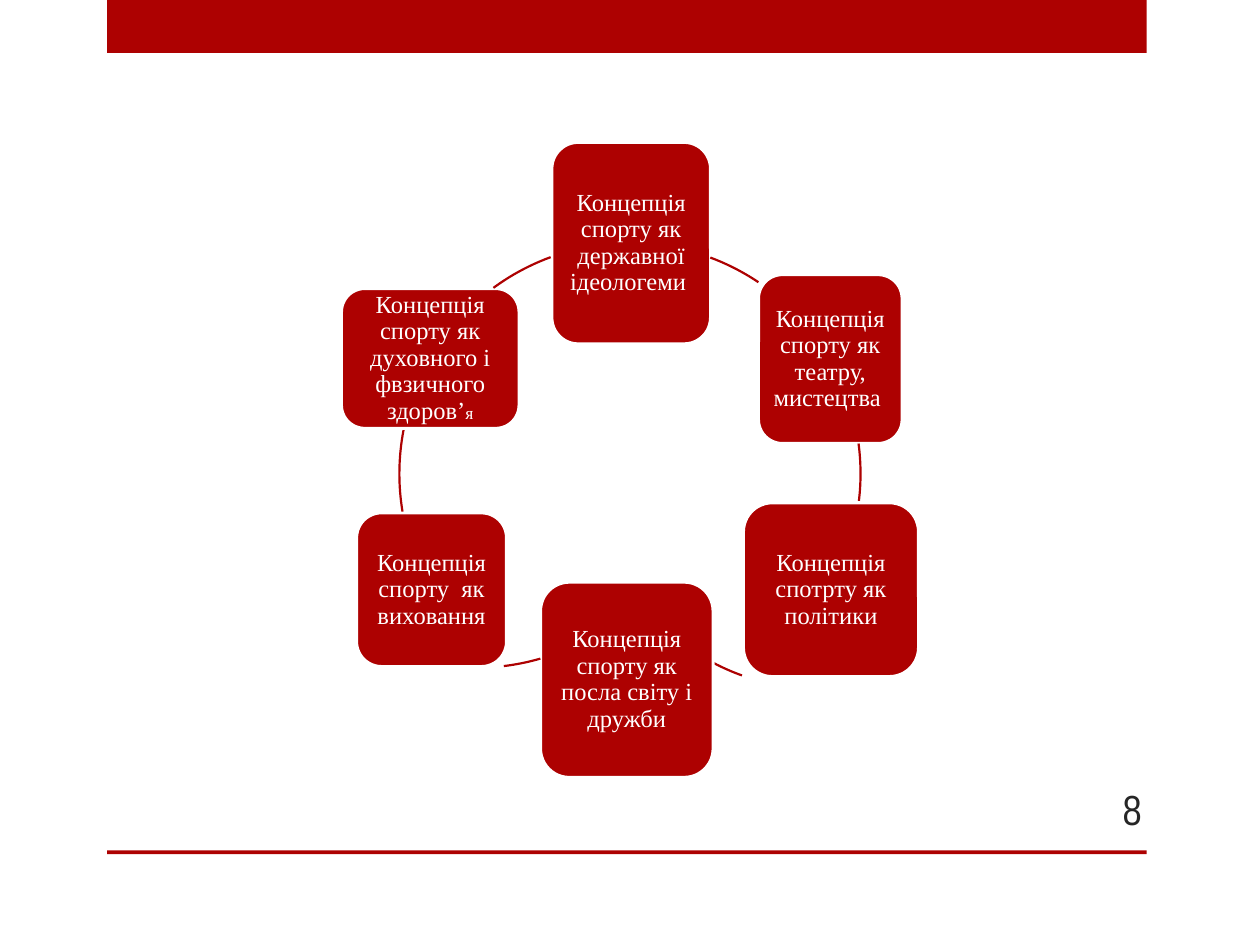
from dataclasses import dataclass
from math import atan2, degrees

from pptx import Presentation
from pptx.dml.color import RGBColor
from pptx.enum.shapes import MSO_SHAPE
from pptx.enum.text import MSO_ANCHOR, PP_ALIGN
from pptx.util import Inches, Pt


@dataclass(frozen=True)
class Theme:
    """Colours, fonts and sizes of the slide."""
    red: RGBColor = RGBColor(0xAD, 0x01, 0x01)
    white: RGBColor = RGBColor(0xFF, 0xFF, 0xFF)
    dark: RGBColor = RGBColor(0x26, 0x26, 0x26)
    body_font: str = "Times New Roman"
    number_font: str = "Arial Narrow"
    body_size: float = 14
    small_size: float = 10
    number_size: float = 24
    box_line: float = 1.75
    arc_line: float = 1.25
    inset: float = 0.06
    ring_radius: float = 1.83


RING_CENTER = (5, 3.76)

CONCEPTS = [
    ((4.38, 1.13, 1.26, 1.6), "Концепція спорту як державної ідеологеми ", ""),
    ((6.02, 2.18, 1.14, 1.34), "Концепція спорту як театру, мистецтва ", ""),
    ((5.9, 3.99, 1.39, 1.38), "Концепція спотрту як політики", ""),
    ((4.29, 4.62, 1.37, 1.55), "Концепція спорту як посла світу і дружби", ""),
    ((2.83, 4.07, 1.19, 1.22), "Концепція спорту  як виховання", ""),
    ((2.71, 2.29, 1.41, 1.11),
     "Концепція спорту як духовного і фвзичного здоров’", "я"),
]

ARCS = [
    (RING_CENTER, (5.64, 2.04), (6.02, 2.24)),
    (RING_CENTER, (6.82, 3.52), (6.82, 3.98)),
    ((6.51, 3.64), (5.89, 5.36), (5.66, 5.26)),
    ((3.78, 3.47), (4.29, 5.23), (4, 5.29)),
    (RING_CENTER, (3.2, 4.06), (3.21, 3.41)),
    (RING_CENTER, (3.92, 2.29), (4.37, 2.04)),
]


def apply_format(target, values):
    """Set every attribute named in values on target."""
    for name, value in values.items():
        setattr(target, name, value)


class SlideBuilder:
    """Draws styled elements on the current slide."""

    def __init__(self, slide, theme):
        """Keep the slide and its theme."""
        self.slide = slide
        self.theme = theme

    def add_shape(self, kind, box):
        """Add a preset shape without a shadow."""
        shape = self.slide.shapes.add_shape(kind, *map(Inches, box))
        shape.shadow.inherit = False
        return shape

    def add_run(self, paragraph, text, font, size, color):
        """Add a formatted run of text."""
        run = paragraph.add_run()
        run.text = text
        apply_format(run.font, {"name": font, "size": Pt(size)})
        run.font.color.rgb = color

    def add_bar(self, box):
        """Add a plain red bar."""
        bar = self.add_shape(MSO_SHAPE.RECTANGLE, box)
        bar.fill.solid()
        bar.fill.fore_color.rgb = self.theme.red
        bar.line.fill.background()

    def add_concept(self, box, text, ending):
        """Add a rounded concept box with an optional small ending."""
        theme = self.theme
        shape = self.add_shape(MSO_SHAPE.ROUNDED_RECTANGLE, box)
        shape.fill.solid()
        shape.fill.fore_color.rgb = theme.red
        shape.line.color.rgb = theme.white
        shape.line.width = Pt(theme.box_line)
        frame = shape.text_frame
        sides = ("left", "top", "right", "bottom")
        apply_format(frame, {f"margin_{side}": Inches(theme.inset) for side in sides})
        apply_format(frame, {"word_wrap": True, "vertical_anchor": MSO_ANCHOR.MIDDLE})
        paragraph = frame.paragraphs[0]
        apply_format(paragraph, {"alignment": PP_ALIGN.CENTER, "line_spacing": 0.9})
        self.add_run(paragraph, text, theme.body_font, theme.body_size, theme.white)
        if ending:
            self.add_run(paragraph, ending, theme.body_font, theme.small_size, theme.white)

    def add_arc(self, center, start, end):
        """Add a clockwise ring arc between two points."""
        radius = self.theme.ring_radius
        left, top = (value - radius for value in center)
        arc = self.add_shape(MSO_SHAPE.ARC, (left, top, 2 * radius, 2 * radius))
        for index, (x, y) in enumerate((start, end)):
            angle = degrees(atan2(y - center[1], x - center[0])) % 360
            arc.adjustments[index] = angle * 0.6
        arc.fill.background()
        arc.line.color.rgb = self.theme.red
        arc.line.width = Pt(self.theme.arc_line)

    def add_number(self, box, text):
        """Add the right-aligned slide number."""
        theme = self.theme
        frame = self.slide.shapes.add_textbox(*map(Inches, box)).text_frame
        apply_format(frame, {"word_wrap": True, "vertical_anchor": MSO_ANCHOR.MIDDLE})
        paragraph = frame.paragraphs[0]
        paragraph.alignment = PP_ALIGN.RIGHT
        self.add_run(paragraph, text, theme.number_font, theme.number_size, theme.dark)


def main():
    """Build and save the presentation."""
    presentation = Presentation()
    apply_format(presentation, {"slide_width": Inches(10), "slide_height": Inches(7.5)})
    slide = presentation.slides.add_slide(presentation.slide_layouts[6])
    builder = SlideBuilder(slide, Theme())
    for top, height in ((0, 0.42), (6.75, 0.03)):
        builder.add_bar((0.85, top, 8.25, height))
    builder.add_number((8.33, 6.22, 0.83, 0.4), "8")
    for concept, arc in zip(CONCEPTS, ARCS):
        builder.add_concept(*concept)
        builder.add_arc(*arc)
    presentation.save("out.pptx")


if __name__ == "__main__":
    main()
